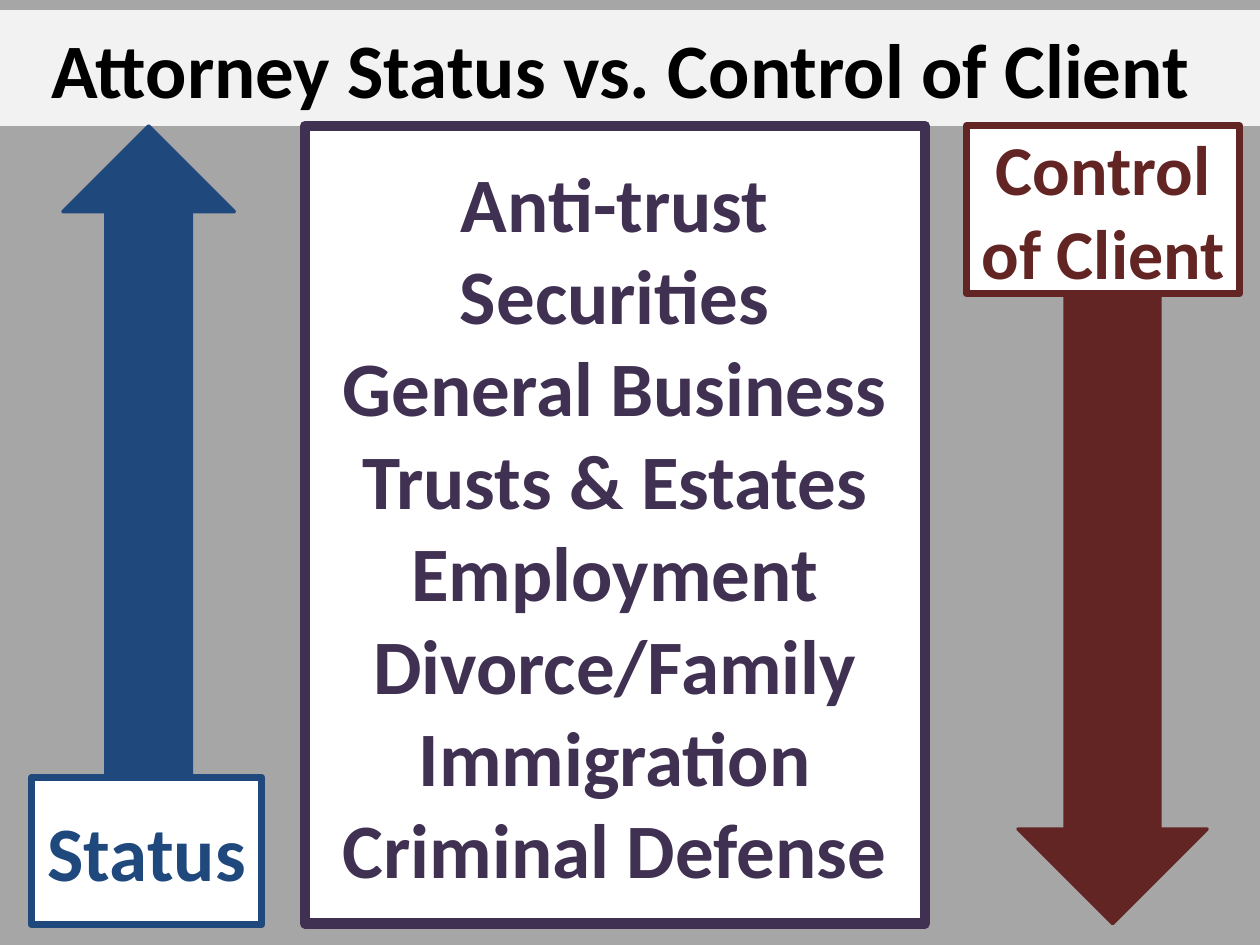
"""Build the slide that sets attorney status against control of the client."""
from pptx import Presentation
from pptx.dml.color import RGBColor
from pptx.enum.shapes import MSO_SHAPE
from pptx.enum.text import MSO_ANCHOR, PP_ALIGN
from pptx.util import Pt

PX = 9144
BLUE, RED, PURPLE, WHITE = "1F497D", "632523", "403152", "FFFFFF"


def paint(color_format, color):
    color_format.rgb = RGBColor.from_string(color)


def add_box(page, kind, place, fill, line, width, lines=(), size=44, color="000000"):
    box = page.shapes.add_shape(kind, *(length * PX for length in place))
    box.shadow.inherit = False
    box.fill.solid()
    paint(box.fill.fore_color, fill)
    if line:
        paint(box.line.color, line)
        box.line.width = Pt(width)
    else:
        box.line.fill.background()
    frame = box.text_frame
    frame.word_wrap = True
    frame.vertical_anchor = MSO_ANCHOR.MIDDLE
    font_format = {"name": "Calibri", "size": Pt(size), "bold": True}
    for index, text in enumerate(lines):
        para = frame.add_paragraph() if index else frame.paragraphs[0]
        para.alignment = PP_ALIGN.CENTER
        span = para.add_run()
        span.text = text
        for name, value in font_format.items():
            setattr(span.font, name, value)
        paint(span.font.color, color)


practices = [
    "Anti-trust", "Securities", "General Business", "Trusts & Estates",
    "Employment", "Divorce/Family", "Immigration", "Criminal Defense",
]
title = ["Attorney Status vs. Control of Client "]
RECT, UP, DOWN = MSO_SHAPE.RECTANGLE, MSO_SHAPE.UP_ARROW, MSO_SHAPE.DOWN_ARROW

deck = Presentation()
deck.slide_width, deck.slide_height = 1000 * PX, 750 * PX
page = deck.slides.add_slide(deck.slide_layouts[6])
page.background.fill.solid()
paint(page.background.fill.fore_color, "A6A6A6")

boxes = [
    (RECT, (0, 8, 1000, 92), "F2F2F2", None, 0, title),
    (UP, (50, 100, 136, 517), BLUE, BLUE, 2),
    (RECT, (25, 617, 183, 117), WHITE, BLUE, 4, ["Status"], 44, BLUE),
    (RECT, (767, 100, 217, 133), WHITE, RED, 4, ["Control of Client"], 40, RED),
    (DOWN, (808, 233, 150, 500), RED, RED, 2),
    (RECT, (242, 100, 492, 633), WHITE, PURPLE, 6, practices, 44, PURPLE),
]
for box_format in boxes:
    add_box(page, *box_format)

deck.save("out.pptx")
